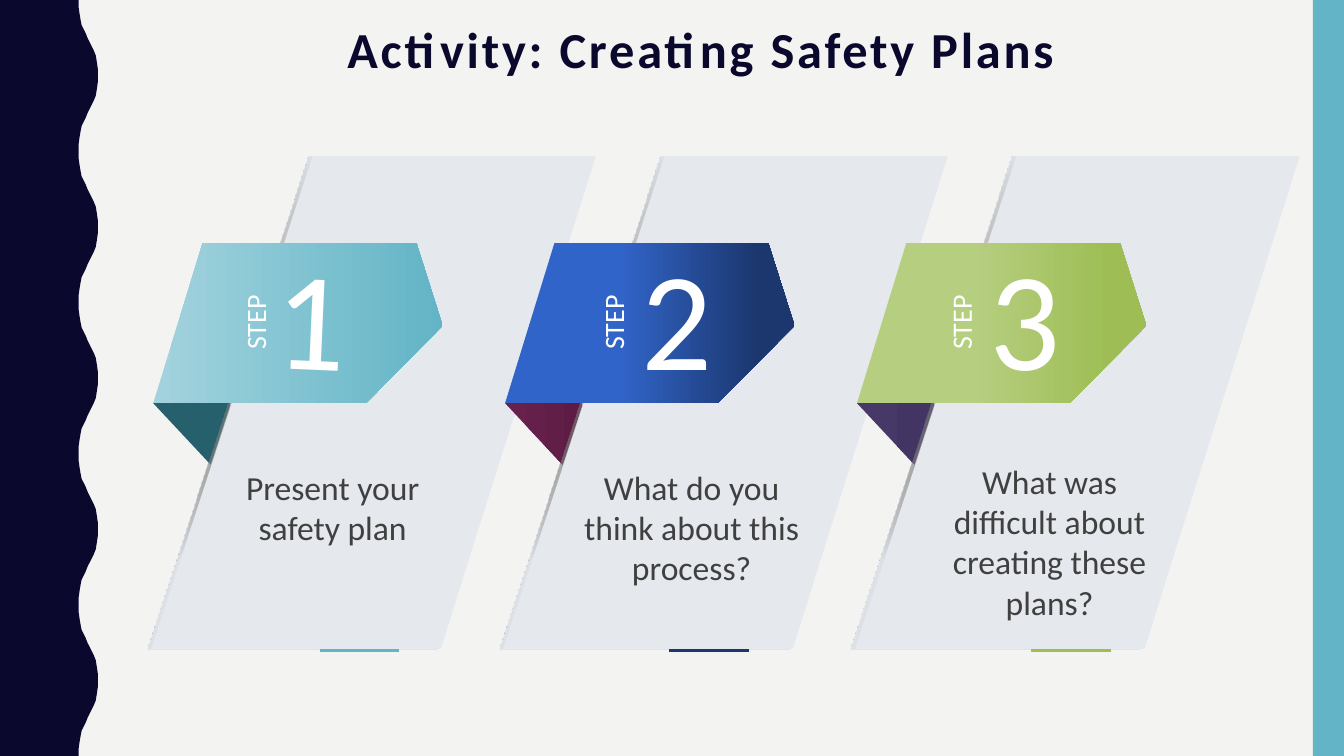
"""Build the slide with three folded-ribbon steps for the safety plan activity."""
from dataclasses import dataclass
from typing import NamedTuple

from lxml import etree
from pptx import Presentation
from pptx import util as u
from pptx.dml.color import RGBColor
from pptx.enum import shapes, text
from pptx.oxml.ns import qn

PX = 9144
FONT = "Calibri"
COLOURS = {
    "ground": "F3F3F2", "navy": "0B082E", "teal": "62B4C6", "body": "404040", "white": "FFFFFF",
    "teal_light": "A1D2DD", "teal_dark": "27606D",
    "blue": "3164C8", "blue_dark": "1B376E", "plum": "67214C", "plum_dark": "5E1C45",
    "green_light": "B6CE80", "green": "9EBE55", "violet": "463967", "violet_dark": "423563",
    "mist": "DCE1E7", "grey": "808080", "panel_top": "E6E9EE", "panel": "E5E8ED",
}
Point = tuple[int, int]


class Stop(NamedTuple):
    at: int
    colour: str
    opacity: int = 100


class Box(NamedTuple):
    left: int
    top: int
    width: int
    height: int


@dataclass
class Step:
    number: str
    question: str
    flap: list[Stop]
    ribbon: list[Stop]
    accent: str
    accent_left: int
    number_left: int
    label_left: int
    question_box: Box
    tilt: float = 0


STEP_PITCH = 349
SHADOW_SHIFT = -4
PANEL = [(310, 155), (591, 155), (437, 644), (150, 644)]
FLAP = [(209, 461), (229, 400), (152, 400)]
RIBBON = [(152, 400), (363, 400), (439, 323), (413, 241), (201, 241)]
SHADOW_STOPS = [Stop(0, "mist"), Stop(34, "grey", 45), Stop(63, "grey", 64), Stop(82, "mist")]
PANEL_STOPS = [Stop(0, "panel"), Stop(89, "panel"), Stop(100, "panel_top")]
WAVE_COUNT, WAVE_LENGTH = 5, 150
HALF_WAVE = [(78, 0), (78, 7), (79, 14), (80, 20), (81, 25), (83, 29), (85, 33), (87, 38),
             (89, 42), (91, 46), (93, 50), (95, 55), (96, 61), (97, 68), (97, 75)]
STEPS = [
    Step("1", "Present your safety plan",
         [Stop(0, "teal_dark"), Stop(100, "teal_dark")],
         [Stop(3, "teal_light"), Stop(100, "teal")],
         "teal", 317, 223, 216, Box(210, 458, 240, 91), 2.6),
    Step("2", "What do you think about this process?",
         [Stop(3, "plum"), Stop(100, "plum_dark")],
         [Stop(40, "blue"), Stop(87, "blue_dark")],
         "blue_dark", 664, 586, 571, Box(566, 458, 240, 131)),
    Step("3", "What was difficult about creating these plans?",
         [Stop(3, "violet"), Stop(100, "violet_dark")],
         [Stop(40, "green_light"), Stop(87, "green")],
         "green", 1023, 931, 916, Box(921, 452, 240, 172)),
]


def rgb(name: str) -> RGBColor:
    """Return the named colour."""
    return RGBColor.from_string(COLOURS[name])


def fill_plain(shape, colour: str) -> None:
    """Give a shape a solid fill with no line or shadow."""
    shape.fill.solid()
    shape.fill.fore_color.rgb = rgb(colour)
    shape.line.fill.background()
    shape.shadow.inherit = False


def fill_gradient(shape, stops: list[Stop], downward: bool = False) -> None:
    """Give a shape a linear gradient running right or down."""
    shape.fill.gradient()
    shape.fill.gradient_angle = 270 if downward else 0
    stop_list = shape.element.spPr.find(qn("a:gradFill")).find(qn("a:gsLst"))
    for old in list(stop_list):
        stop_list.remove(old)
    for stop in stops:
        mark = etree.SubElement(stop_list, qn("a:gs"), pos=str(stop.at * 1000))
        colour = etree.SubElement(mark, qn("a:srgbClr"), val=COLOURS[stop.colour])
        if stop.opacity < 100:
            etree.SubElement(colour, qn("a:alpha"), val=str(stop.opacity * 1000))
    shape.line.fill.background()
    shape.shadow.inherit = False


def add_outline(page, points: list[Point], shift: int = 0):
    """Add a closed polygon moved right by shift."""
    moved = [(x + shift, y) for x, y in points]
    builder = page.shapes.build_freeform(*moved[0], scale=PX)
    builder.add_line_segments(moved[1:], close=True)
    return builder.convert_to_shape()


def add_text(page, box: Box, words: str, size: int, colour: str,
             anchor=text.MSO_ANCHOR.TOP, inset: bool = True, rotation: float = 0):
    """Add a centred, wrapped text box and return its paragraph."""
    shape = page.shapes.add_textbox(*(side * PX for side in box))
    shape.rotation = rotation
    frame = shape.text_frame
    frame.word_wrap = True
    frame.vertical_anchor = anchor
    if not inset:
        frame.margin_left = frame.margin_right = frame.margin_top = frame.margin_bottom = 0
    para = frame.paragraphs[0]
    para.text = words
    para.alignment = text.PP_ALIGN.CENTER
    para.font.name = FONT
    para.font.size = u.Pt(size)
    para.font.color.rgb = rgb(colour)
    return para


def add_accent(page, left: int, colour: str) -> None:
    """Add the short line below a panel."""
    line = page.shapes.add_connector(
        shapes.MSO_CONNECTOR.STRAIGHT, left * PX, 645 * PX, (left + 79) * PX, 645 * PX)
    line.line.color.rgb = rgb(colour)
    line.line.width = u.Pt(2)
    etree.SubElement(line.element.spPr, qn("a:effectLst"))


def add_step(page, step: Step, shift: int) -> None:
    """Draw one step with its panel, ribbon and words."""
    fill_gradient(add_outline(page, FLAP, shift), step.flap)
    fill_gradient(add_outline(page, PANEL, shift + SHADOW_SHIFT), SHADOW_STOPS, downward=True)
    fill_gradient(add_outline(page, PANEL, shift), PANEL_STOPS, downward=True)
    fill_gradient(add_outline(page, RIBBON, shift), step.ribbon)
    add_accent(page, step.accent_left, step.accent)
    bottom = text.MSO_ANCHOR.BOTTOM
    add_text(page, step.question_box, step.question, 24, "body")
    add_text(page, Box(step.number_left, 227, 171, 168), step.number, 100, "white",
             bottom, False, step.tilt)
    add_text(page, Box(step.label_left, 303, 73, 34), "STEP", 20, "white", bottom, False, 270)


def add_edges(page) -> None:
    """Draw the wavy left edge and the right bar."""
    wave = HALF_WAVE + [(x, WAVE_LENGTH - y) for x, y in HALF_WAVE[-2:0:-1]]
    crest = [(x, y + WAVE_LENGTH * turn) for turn in range(WAVE_COUNT) for x, y in wave]
    fill_plain(add_outline(page, [(0, 0), *crest, (78, 750), (0, 750)]), "navy")
    bar = page.shapes.add_shape(
        shapes.MSO_SHAPE.RECTANGLE, 1302 * PX, 0, 31 * PX, 750 * PX)
    fill_plain(bar, "teal")


def main() -> None:
    """Build and save the deck."""
    deck = Presentation()
    deck.slide_width, deck.slide_height = 1333 * PX, 750 * PX
    page = deck.slides.add_slide(deck.slide_layouts[6])
    page.background.fill.solid()
    page.background.fill.fore_color.rgb = rgb("ground")
    add_edges(page)
    for index, step in enumerate(STEPS):
        add_step(page, step, index * STEP_PITCH)
    title = add_text(page, Box(92, 0, 1207, 103), "Activity: Creating Safety Plans", 36, "navy",
                     text.MSO_ANCHOR.MIDDLE)
    title.line_spacing = 0.9
    title.font.bold = True
    title.runs[0].font._element.set("spc", "200")
    deck.save("out.pptx")


if __name__ == "__main__":
    main()
